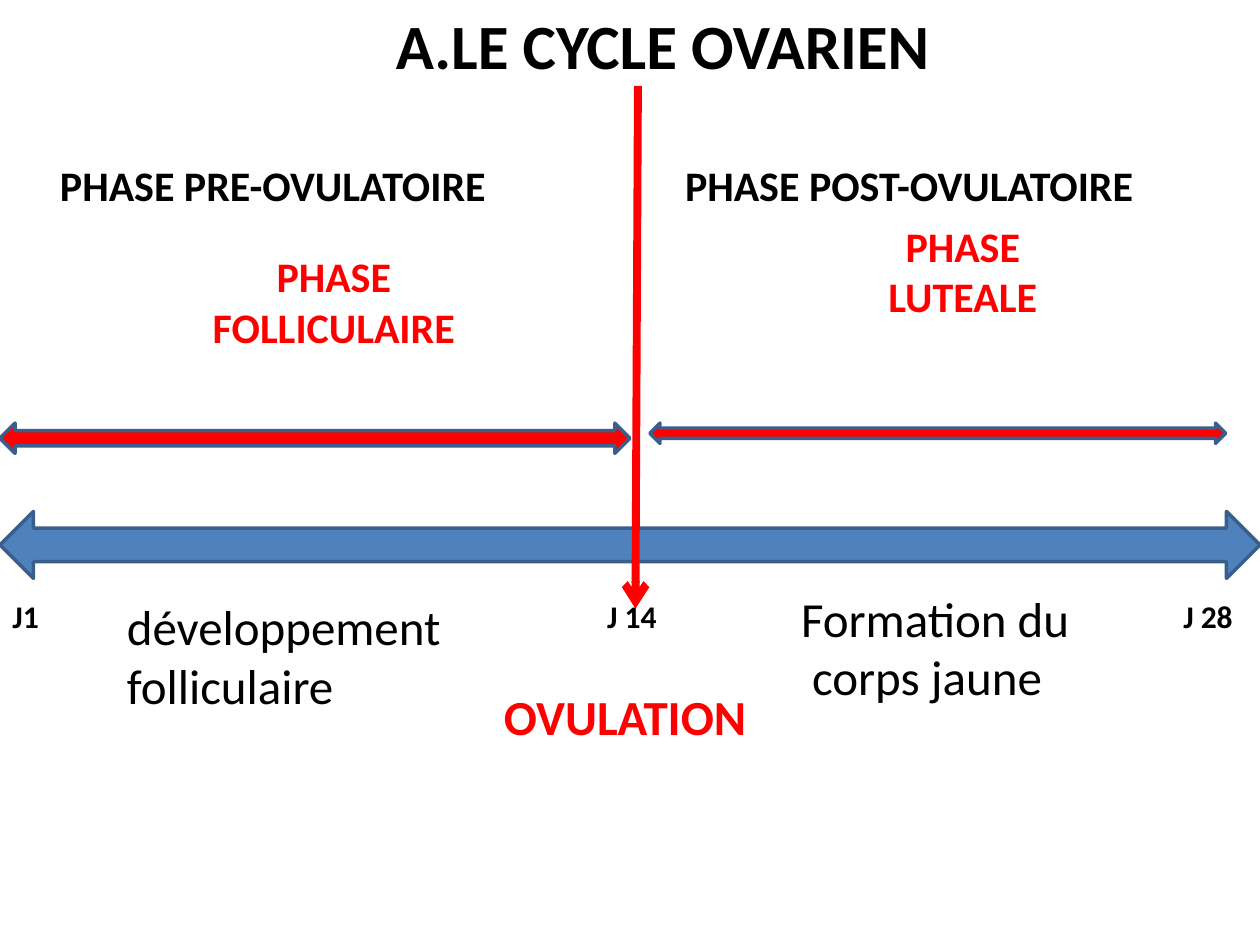
from lxml import etree
from pptx import Presentation
from pptx.dml.color import RGBColor
from pptx.enum.shapes import MSO_CONNECTOR, MSO_SHAPE
from pptx.enum.text import MSO_ANCHOR, PP_ALIGN
from pptx.oxml.ns import qn
from pptx.util import Cm, Pt

LEFT, CENTER, RIGHT = PP_ALIGN.LEFT, PP_ALIGN.CENTER, PP_ALIGN.RIGHT
TOP = MSO_ANCHOR.TOP
DOUBLE_ARROW = MSO_SHAPE.LEFT_RIGHT_ARROW
STRAIGHT = MSO_CONNECTOR.STRAIGHT

FONT = "Calibri"
COLORS = {"text": "000000", "accent": "FF0000", "cycle": "4F81BD", "outline": "3A5F8C"}


def color(name):
    return RGBColor.from_string(COLORS[name])


def write(shape, text, size, ink="text", bold=True, align=LEFT):
    frame = shape.text_frame
    frame.text = text
    frame.word_wrap = True
    frame.vertical_anchor = TOP
    for paragraph in frame.paragraphs:
        paragraph.alignment = align
        for run in paragraph.runs:
            run.font.name = FONT
            run.font.size = Pt(size)
            run.font.bold = bold
            run.font.color.rgb = color(ink)


def add_label(slide, box, text, size, **style):
    label = slide.shapes.add_textbox(*map(Cm, box))
    write(label, text, size, **style)


def add_span(slide, box, fill):
    """Double-headed block arrow covering a stretch of the cycle."""
    span = slide.shapes.add_shape(DOUBLE_ARROW, *map(Cm, box))
    span.shadow.inherit = False
    span.fill.solid()
    span.fill.fore_color.rgb = color(fill)
    span.line.color.rgb = color("outline")
    span.line.width = Pt(2)


def add_title(slide, box):
    title = slide.shapes.title
    title.left, title.top, title.width, title.height = map(Cm, box)
    write(title, "A.LE CYCLE OVARIEN", 36, align=CENTER)


def add_timeline(slide, box):
    left, top, width, height = box
    add_span(slide, (left, top, width, height), "cycle")
    days_top, day_width = top + 1.6, 2.4
    days = (
        ("J1", left, LEFT),
        ("J 14", left + (width - day_width) / 2 + 0.04, CENTER),
        ("J 28", left + width - day_width - 0.3, RIGHT),
    )
    for day, day_left, align in days:
        add_label(slide, (day_left, days_top, day_width, 1.02), day, 18, align=align)


def add_phase(slide, box, heading, name, outcome):
    """Each text comes with its offset from the top left corner of the box."""
    left, top, width, height = box
    span_top = top + 5.43
    add_span(slide, (left, span_top, width, height - 5.43), "accent")
    parts = (
        (heading, 10.6, 1.2, {"size": 24}),
        (name, 6.8, 2.4, {"size": 24, "ink": "accent", "align": CENTER}),
        (outcome, 7.4, 2.7, {"size": 28, "bold": False}),
    )
    for (text, dx, dy), part_width, part_height, style in parts:
        add_label(slide, (left + dx, top + dy, part_width, part_height), text, **style)


def add_ovulation(slide, box):
    """Red pointer down to day 14, with its caption underneath."""
    left, top, width, height = box
    middle = left + width / 2
    pointer = slide.shapes.add_connector(
        STRAIGHT, Cm(middle + 0.26), Cm(top), Cm(middle + 0.21), Cm(top + 10.54)
    )
    pointer.line.color.rgb = color("accent")
    pointer.line.width = Pt(4.5)
    etree.SubElement(pointer.line._get_or_add_ln(), qn("a:tailEnd"), type="arrow")
    etree.SubElement(pointer._element.spPr, qn("a:effectLst"))
    caption = (left, top + height - 1.45, width, 1.45)
    add_label(slide, caption, "OVULATION", 28, ink="accent", align=CENTER)


def main():
    deck = Presentation()
    deck.slide_width, deck.slide_height = Cm(25.4), Cm(19.05)
    slide = deck.slides.add_slide(deck.slide_layouts[5])

    add_title(slide, (6.36, 0, 14, 1.8))
    add_timeline(slide, (0, 10.31, 25.4, 1.35))
    add_phase(
        slide,
        (0, 3.1, 12.7, 6.04),
        ("PHASE PRE-OVULATOIRE", 0.96, 0),
        ("PHASE\nFOLLICULAIRE", 3.33, 1.83),
        ("développement\nfolliculaire", 2.31, 8.81),
    )
    add_phase(
        slide,
        (13.1, 3.1, 11.61, 5.84),
        ("PHASE POST-OVULATOIRE", 0.46, 0),
        ("PHASE\nLUTEALE", 2.91, 1.22),
        ("Formation du\n corps jaune", 2.8, 8.63),
    )
    add_ovulation(slide, (9.85, 1.73, 5.5, 13.44))
    deck.save("out.pptx")


if __name__ == "__main__":
    main()
